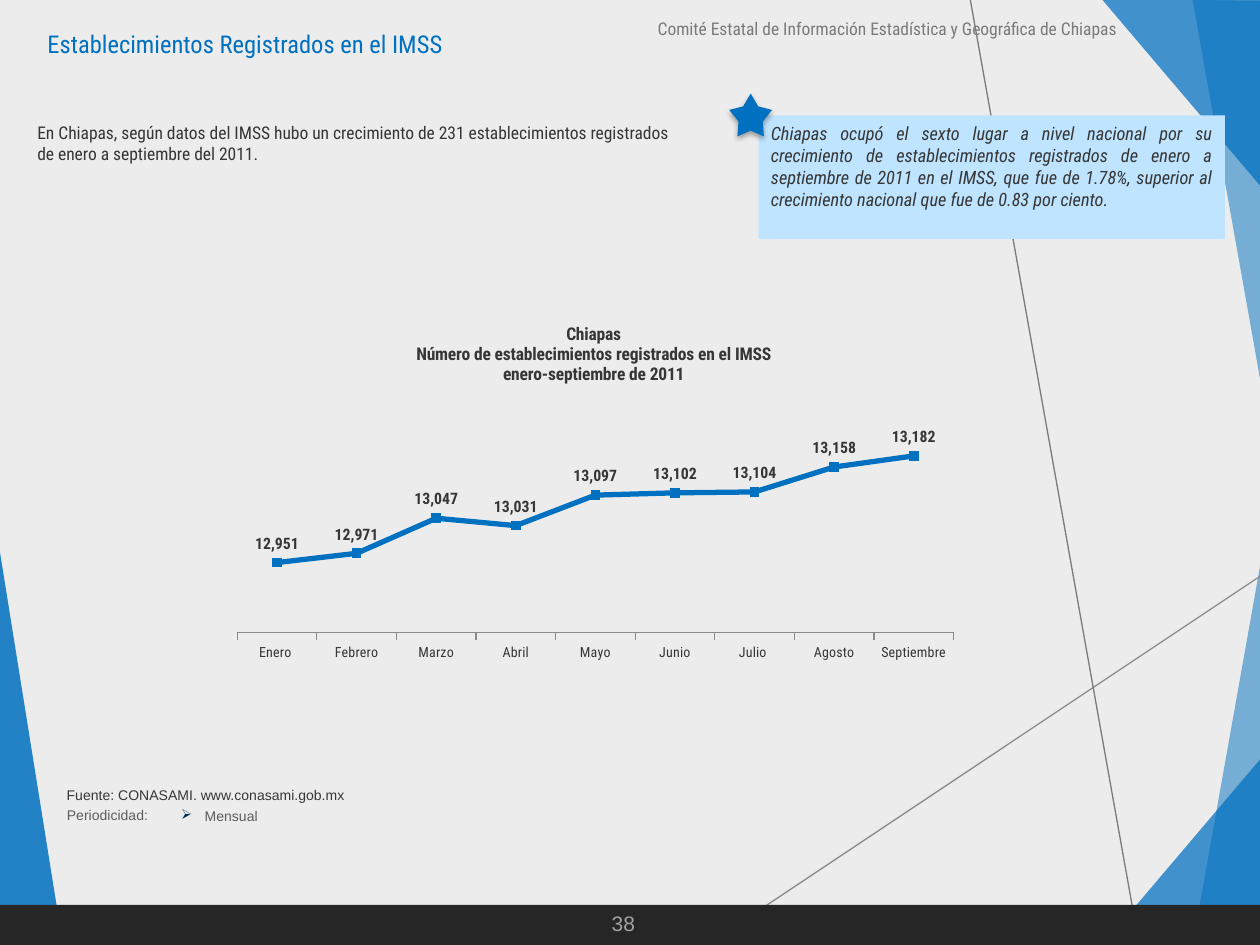
from dataclasses import dataclass

from lxml.etree import SubElement
from pptx import Presentation
from pptx.chart.data import CategoryChartData
from pptx.dml.color import RGBColor
from pptx.enum.chart import XL_CHART_TYPE, XL_LABEL_POSITION, XL_MARKER_STYLE, XL_TICK_LABEL_POSITION, XL_TICK_MARK
from pptx.enum.shapes import MSO_CONNECTOR, MSO_SHAPE
from pptx.enum.text import MSO_ANCHOR, PP_ALIGN
from pptx.oxml import parse_xml
from pptx.oxml.ns import nsdecls, qn
from pptx.util import Pt


@dataclass(frozen=True)
class Theme:
    font: str = "Roboto Condensed"
    plain_font: str = "Arial"
    background: str = "ECECEC"
    blue: str = "0070C0"
    pale_blue: str = "BFE4FF"
    bullet: str = "012A4F"
    footer: str = "262626"
    text: str = "363636"
    muted: str = "5C5C5C"
    gray: str = "7A7A7A"
    line_gray: str = "8A8A8A"
    number: str = "A2A2A2"
    title_size: float = 14
    number_size: float = 12
    callout_size: float = 10.5
    body_size: float = 10
    label_size: float = 9
    small_size: float = 8


theme = Theme()


def add_child(parent, tag, **attributes):
    return SubElement(parent, qn(tag), {name: str(value) for name, value in attributes.items()})


def write_text(shape, text, size, color, font=theme.font, align=PP_ALIGN.LEFT, wrap=True, inset=None, italic=False):
    frame = shape.text_frame
    frame.text = text
    frame.word_wrap = wrap
    frame.vertical_anchor = MSO_ANCHOR.TOP
    if inset is not None:
        frame.margin_left = frame.margin_right = frame.margin_top = frame.margin_bottom = Pt(inset)
    paragraph = frame.paragraphs[0]
    paragraph.alignment = align
    run_font = paragraph.runs[0].font
    run_font.name = font
    run_font.size = Pt(size)
    run_font.italic = italic
    run_font.color.rgb = RGBColor.from_string(color)
    return paragraph


presentation = Presentation()
presentation.slide_width = Pt(720)
presentation.slide_height = Pt(540)
slide = presentation.slides.add_slide(presentation.slide_layouts[6])
slide.background.fill.solid()
slide.background.fill.fore_color.rgb = RGBColor.from_string(theme.background)
shapes = slide.shapes

left_facet = [(0, 315.5), (36, 540), (0, 539.5)]
right_facets = [
    ([(630, 540), (720, 434), (720.5, 540)], 72),
    ([(681.5, 540), (720.5, 321), (720.5, 540)], 50),
    ([(630, 0), (720, 106), (720.5, 0)], 72),
    ([(681.5, 0), (720.5, 219), (720.5, 0.5)], 50),
]
rules = [((404, 540), (720.5, 329), theme.line_gray), ((554.5, 0), (651, 540), theme.gray)]

for points, opacity in [(left_facet, 85)] + right_facets:
    corners = [(Pt(x), Pt(y)) for x, y in points]
    builder = shapes.build_freeform(*corners[0], scale=1.0)
    builder.add_line_segments(corners[1:], close=True)
    facet = builder.convert_to_shape()
    facet.shadow.inherit = False
    facet.fill.solid()
    facet.fill.fore_color.rgb = RGBColor.from_string(theme.blue)
    facet.line.fill.background()
    add_child(facet.element.spPr.find(".//" + qn("a:srgbClr")), "a:alpha", val=opacity * 1000)

for start, end, color in rules:
    connector = shapes.add_connector(MSO_CONNECTOR.STRAIGHT, *map(Pt, start + end))
    connector.line.color.rgb = RGBColor.from_string(color)
    connector.line.width = Pt(0.75)
    add_child(connector.element.spPr, "a:effectLst")

blocks = {}
for name, kind, box, color in [
    ("footer", MSO_SHAPE.RECTANGLE, (0, 517, 720, 23), theme.footer),
    ("callout", MSO_SHAPE.RECTANGLE, (433.5, 66, 266.5, 70.5), theme.pale_blue),
    ("star", MSO_SHAPE.STAR_5_POINT, (416.75, 53.5, 24.5, 24.5), theme.blue),
]:
    block = shapes.add_shape(kind, *map(Pt, box))
    block.shadow.inherit = False
    block.fill.solid()
    block.fill.fore_color.rgb = RGBColor.from_string(color)
    block.line.fill.background()
    blocks[name] = block

write_text(
    blocks["callout"],
    "Chiapas ocupó el sexto lugar a nivel nacional por su crecimiento de establecimientos registrados "
    "de enero a septiembre de 2011 en el IMSS, que fue de 1.78%, superior al crecimiento nacional "
    "que fue de 0.83 por ciento.",
    theme.callout_size, theme.text, align=PP_ALIGN.JUSTIFY, italic=True,
)
blocks["star"].adjustments[0] = 0.284
effects = blocks["star"].element.spPr.find(qn("a:effectLst"))
shadow = add_child(effects, "a:outerShdw", blurRad=Pt(3.1), dist=Pt(1.8), dir=5400000, rotWithShape=0)
add_child(add_child(shadow, "a:srgbClr", val="000000"), "a:alpha", val=35000)

header = shapes.add_textbox(Pt(320.5), Pt(6.5), Pt(324.5), Pt(19.5))
write_text(header, "Comité Estatal de Información Estadística y Geográfica de Chiapas",
           theme.body_size, theme.gray, align=PP_ALIGN.RIGHT)
title = shapes.add_textbox(Pt(20), Pt(13), Pt(317.5), Pt(28))
write_text(title, "Establecimientos Registrados en el IMSS", theme.title_size, theme.blue)
summary = shapes.add_textbox(Pt(14.25), Pt(66), Pt(380), Pt(31.5))
write_text(summary, "En Chiapas, según datos del IMSS hubo un crecimiento de 231 establecimientos registrados "
           "de enero a septiembre del 2011.", theme.body_size, theme.text)
source = shapes.add_textbox(Pt(31), Pt(445.75), Pt(187), Pt(17))
write_text(source, "Fuente: CONASAMI. www.conasami.gob.mx", theme.small_size, theme.text, theme.plain_font)
page_number = shapes.add_textbox(Pt(342.5), Pt(516.5), Pt(28), Pt(21.5))
write_text(page_number, "38", theme.number_size, theme.number, theme.plain_font, wrap=False)
period_label = shapes.add_textbox(Pt(38.25), Pt(461), Pt(47), Pt(9.5))
write_text(period_label, "Periodicidad:", theme.small_size, theme.muted, theme.plain_font, wrap=False, inset=0)
period = shapes.add_textbox(Pt(103.5), Pt(461.5), Pt(44.5), Pt(9.5))
paragraph = write_text(period, "Mensual", theme.small_size, theme.muted, theme.plain_font, wrap=False, inset=0)
properties = paragraph._p.get_or_add_pPr()
properties.set("marL", str(Pt(13.5)))
properties.set("indent", str(-Pt(13.5)))
add_child(add_child(properties, "a:buClr"), "a:srgbClr", val=theme.bullet)
add_child(properties, "a:buChar", char="➢")

chart_data = CategoryChartData(number_format="#,##0")
chart_data.categories = ["Enero ", "Febrero", "Marzo", "Abril", "Mayo", "Junio", "Julio ", "Agosto", "Septiembre"]
chart_data.add_series("Series 1", [12951, 12971, 13047, 13031, 13097, 13102, 13104, 13158, 13182])
chart = shapes.add_chart(XL_CHART_TYPE.LINE_MARKERS, Pt(122.5), Pt(173.5), Pt(435.5), Pt(216), chart_data).chart
chart.has_legend = False
chart.font.name = theme.font
chart.font.size = Pt(theme.body_size)
chart.font.color.rgb = RGBColor.from_string(theme.text)
chart.element.find(qn("c:chart")).addnext(parse_xml(
    f'<c:spPr {nsdecls("c", "a")}><a:solidFill><a:srgbClr val="{theme.background}"/></a:solidFill>'
    '<a:ln><a:noFill/></a:ln></c:spPr>'
))

chart.has_title = True
chart_title = chart.chart_title.text_frame
chart_title.text = "Chiapas\nNúmero de establecimientos registrados en el IMSS\nenero-septiembre de 2011"
for paragraph in chart_title.paragraphs:
    title_font = paragraph.runs[0].font
    title_font.name = theme.font
    title_font.size = Pt(theme.body_size)
    title_font.bold = True
    title_font.color.rgb = RGBColor.from_string(theme.text)

for tag, position in [
    ("c:title", {"xMode": "edge", "yMode": "edge", "x": 0.26, "y": 0.04}),
    ("c:plotArea", {"layoutTarget": "inner", "xMode": "edge", "yMode": "edge",
                    "x": 0.03, "y": 0.32, "w": 0.94, "h": 0.55}),
]:
    parent = chart.element.find(".//" + qn(tag))
    layout = parent.find(qn("c:layout"))
    if layout is None:
        layout = parse_xml(f'<c:layout {nsdecls("c")}/>')
        parent.insert(0, layout)
    manual_layout = add_child(layout, "c:manualLayout")
    for name, value in position.items():
        add_child(manual_layout, "c:" + name, val=value)

value_axis = chart.value_axis
value_axis.minimum_scale = 12800
value_axis.maximum_scale = 13250
value_axis.has_major_gridlines = False
value_axis.visible = False
category_axis = chart.category_axis
category_axis.major_tick_mark = XL_TICK_MARK.OUTSIDE
category_axis.tick_label_position = XL_TICK_LABEL_POSITION.LOW
category_axis.tick_labels.font.size = Pt(theme.small_size)
category_axis.format.line.color.rgb = RGBColor.from_string(theme.line_gray)

plot = chart.plots[0]
plot.vary_by_categories = False
series = plot.series[0]
series.smooth = False
series.format.line.color.rgb = RGBColor.from_string(theme.blue)
series.format.line.width = Pt(3)
series.marker.style = XL_MARKER_STYLE.SQUARE
series.marker.size = 5
series.marker.format.fill.solid()
series.marker.format.fill.fore_color.rgb = RGBColor.from_string(theme.blue)
series.marker.format.line.color.rgb = RGBColor.from_string(theme.blue)
labels = series.data_labels
labels.show_value = True
labels.number_format = "#,##0"
labels.number_format_is_linked = False
labels.position = XL_LABEL_POSITION.ABOVE
labels.font.size = Pt(theme.label_size)
labels.font.bold = True

presentation.save("out.pptx")
